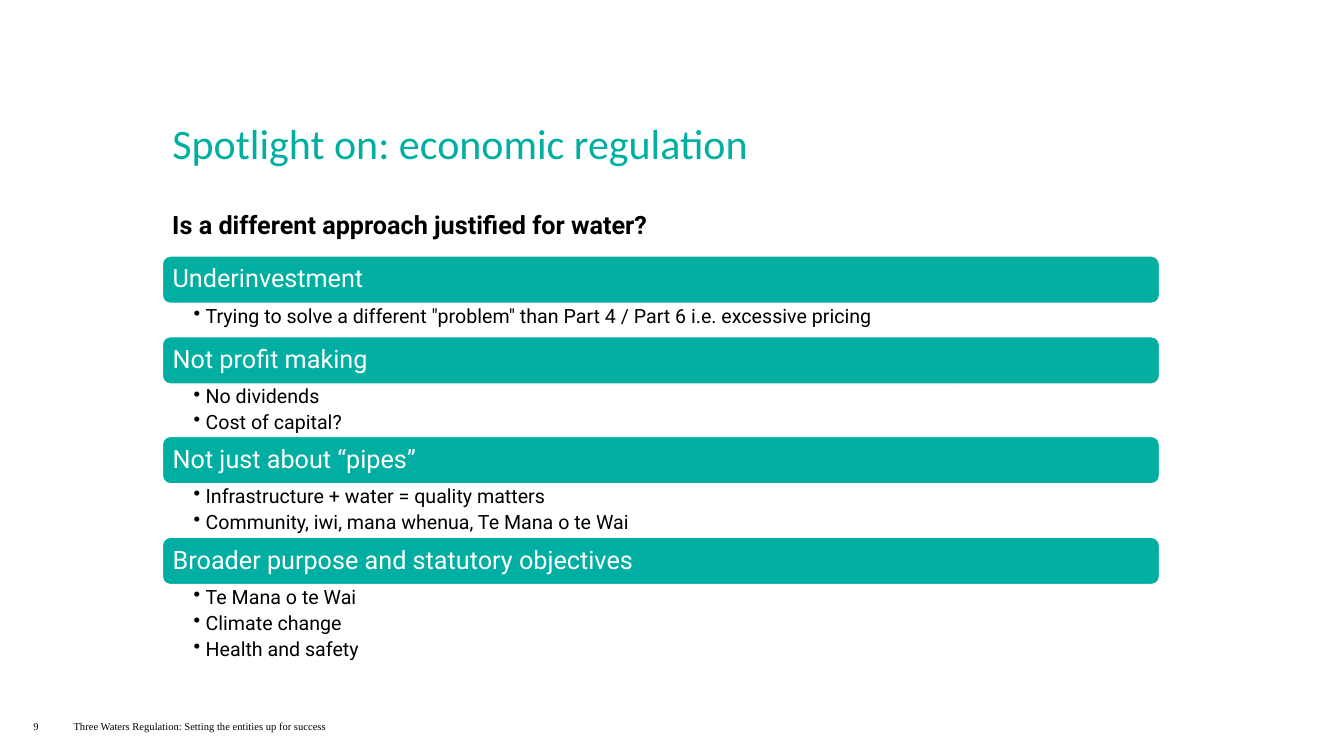
"""Build the slide on economic regulation of water."""
from dataclasses import dataclass

from lxml.etree import SubElement
from pptx import Presentation
from pptx.dml.color import RGBColor
from pptx.enum.shapes import MSO_SHAPE
from pptx.enum.text import MSO_ANCHOR, MSO_AUTO_SIZE, PP_ALIGN
from pptx.oxml.ns import qn
from pptx.util import Inches, Pt

COLOURS = {"teal": "00AFA2", "white": "FFFFFF", "black": "000000"}
LEFT, WIDTH, BAR_HEIGHT, FIRST_TOP = 1.61, 9.89, 0.47, 2.54


@dataclass
class Style:
    font: str
    size: float
    colour: str
    bold: bool = False
    line_spacing: float = 1.0
    space_after: float = 0


@dataclass
class Topic:
    heading: str
    points: list[str]
    points_height: float


@dataclass
class Label:
    text: str
    area: tuple[float, float, float, float]
    insets: tuple[float, float, float, float]
    anchor: MSO_ANCHOR
    style: Style


TITLE = Style("Calibri", 30, "teal", line_spacing=0.9)
QUESTION = Style("Roboto", 18, "black", bold=True)
HEADING = Style("Roboto", 18, "white", line_spacing=0.9)
POINT = Style("Roboto", 14, "black", line_spacing=0.9, space_after=3.3)
FOOTER = Style("Times New Roman", 7.5, "black")

TEXT_INSETS = (0.1, 0.05, 0.1, 0.05)
FOOTER_INSETS = (0, 0.05, 0, 0.05)

TOPICS = [
    Topic("Underinvestment",
          ['Trying to solve a different "problem" than Part 4 / Part 6 i.e. excessive pricing'], 0.33),
    Topic("Not profit making", ["No dividends", "Cost of capital?"], 0.52),
    Topic("Not just about “pipes”",
          ["Infrastructure + water = quality matters",
           "Community, iwi, mana whenua, Te Mana o te Wai"], 0.53),
    Topic("Broader purpose and statutory objectives",
          ["Te Mana o te Wai", "Climate change", "Health and safety"], 0.77),
]
LABELS = [
    Label("Is a different approach justified for water?", (LEFT, 2.03, 6.66, 0.4),
          TEXT_INSETS, MSO_ANCHOR.TOP, QUESTION),
    Label("9", (0.33, 7.09, 0.28, 0.23), FOOTER_INSETS, MSO_ANCHOR.MIDDLE, FOOTER),
    Label("Three Waters Regulation: Setting the entities up for success",
          (0.73, 7.09, 4.5, 0.23), FOOTER_INSETS, MSO_ANCHOR.MIDDLE, FOOTER),
]


def colour(name: str) -> RGBColor:
    """Return the named colour."""
    return RGBColor.from_string(COLOURS[name])


def write(box, text: str, style: Style, insets: tuple, anchor: MSO_ANCHOR) -> None:
    """Fill a shape with left-aligned text in one style."""
    frame = box.text_frame
    frame.text = text
    frame.word_wrap = True
    frame.auto_size = MSO_AUTO_SIZE.NONE
    frame.vertical_anchor = anchor
    (frame.margin_left, frame.margin_top,
     frame.margin_right, frame.margin_bottom) = map(Inches, insets)
    for para in frame.paragraphs:
        para.alignment = PP_ALIGN.LEFT
        para.line_spacing = style.line_spacing
        para.space_before = Pt(0)
        para.space_after = Pt(style.space_after)
        for span in para.runs:
            span.font.name = style.font
            span.font.size = Pt(style.size)
            span.font.bold = style.bold
            span.font.color.rgb = colour(style.colour)


def add_bullets(box) -> None:
    """Give each paragraph of a shape a hanging bullet."""
    for para in box.text_frame.paragraphs:
        para.level = 1
        properties = para._p.get_or_add_pPr()
        properties.set("marL", str(Inches(0.12)))
        properties.set("indent", str(Inches(-0.12)))
        SubElement(properties, qn("a:buChar")).set("char", "•")


def add_title(page, text: str) -> None:
    """Place and format the title placeholder."""
    title = page.shapes.title
    title.left, title.top, title.width, title.height = map(Inches, (LEFT, 1.17, 10.13, 0.56))
    write(title, text, TITLE, TEXT_INSETS, MSO_ANCHOR.MIDDLE)


def add_label(page, label: Label) -> None:
    """Draw one plain text box."""
    box = page.shapes.add_textbox(*map(Inches, label.area))
    write(box, label.text, label.style, label.insets, label.anchor)


def add_topic(page, topic: Topic, top: float) -> float:
    """Draw a heading bar with its points and return the bottom edge."""
    bar = page.shapes.add_shape(MSO_SHAPE.ROUNDED_RECTANGLE, Inches(LEFT), Inches(top),
                                Inches(WIDTH), Inches(BAR_HEIGHT))
    bar.shadow.inherit = False
    bar.fill.solid()
    bar.fill.fore_color.rgb = colour("teal")
    bar.line.color.rgb = colour("white")
    bar.line.width = Pt(1)
    write(bar, topic.heading, HEADING, (0.08, 0.07, 0.08, 0.07), MSO_ANCHOR.MIDDLE)
    points_top = top + BAR_HEIGHT
    box = page.shapes.add_textbox(Inches(LEFT), Inches(points_top),
                                  Inches(WIDTH), Inches(topic.points_height))
    write(box, "\n".join(topic.points), POINT, (0.31, 0.03, 0.14, 0.03), MSO_ANCHOR.TOP)
    add_bullets(box)
    return points_top + topic.points_height


def main() -> None:
    """Build and save the deck."""
    deck = Presentation()
    deck.slide_width, deck.slide_height = Inches(13.33), Inches(7.5)
    page = deck.slides.add_slide(deck.slide_layouts[5])
    add_title(page, "Spotlight on: economic regulation")
    top = FIRST_TOP
    for topic in TOPICS:
        top = add_topic(page, topic, top)
    for label in LABELS:
        add_label(page, label)
    deck.save("out.pptx")


if __name__ == "__main__":
    main()
